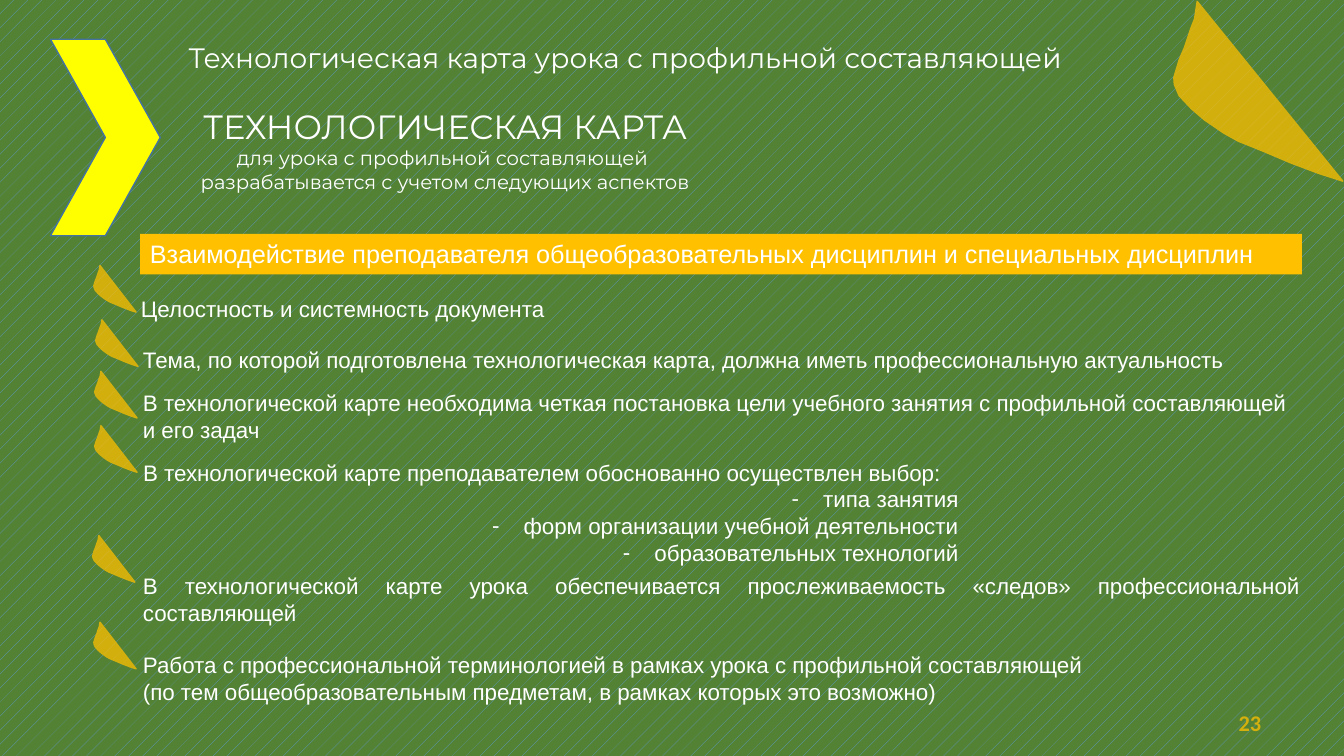
from lxml.etree import SubElement
from pptx import Presentation
from pptx.dml.color import RGBColor as RGB
from pptx.enum.dml import MSO_PATTERN as PATTERN
from pptx.enum.shapes import MSO_SHAPE as SHAPE
from pptx.enum.text import MSO_ANCHOR as ANCHOR, MSO_AUTO_SIZE as AUTO, PP_ALIGN as ALIGN
from pptx.oxml.ns import qn
from pptx.util import Pt

COLORS = {
    "green": "548235", "blue": "5B9BD5", "white": "FFFFFF", "yellow": "FFFF00",
    "amber": "FFC000", "gold": "D3B00E", "navy": "43739E",
}
LEAF = [
    (2.7, 0), (3.5, 12.6), (2.7, 20), (1.8, 34), (0.6, 43), (0, 56.3), (1.1, 61), (5, 68),
    (13, 75), (21, 80.5), (32.5, 86.4), (41, 89.6), (55, 92.4), (71, 96), (86.5, 98.6), (100, 100),
]
LEAF_SPOTS = [(67, 193), (68.4, 231.8), (67.7, 268.6), (67.7, 307.4), (66.2, 385.9), (67, 447.8)]
ASPECTS = [
    ((93.6, 207.4, 841, 26.6), ALIGN.JUSTIFY, ["Целостность и системность документа"]),
    ((95, 243.4, 841, 26.6), ALIGN.JUSTIFY,
     ["Тема, по которой подготовлена технологическая карта, должна иметь профессиональную актуальность"]),
    ((95, 274.3, 847.4, 46), ALIGN.LEFT,
     ["В технологической карте необходима четкая постановка цели учебного занятия с профильной составляющей",
      "и его задач"]),
    ((95, 405.4, 841, 46), ALIGN.JUSTIFY,
     ["В технологической карте урока обеспечивается прослеживаемость «следов» профессиональной составляющей"]),
    ((95, 461.5, 699, 46), ALIGN.LEFT,
     ["Работа с профессиональной терминологией в рамках урока с профильной составляющей",
      "(по тем общеобразовательным предметам, в рамках которых это возможно)"]),
]
CHOICES = ["типа занятия", "форм организации учебной деятельности", "образовательных технологий"]


def color(name):
    return RGB.from_string(COLORS[name])


def apply(target, values):
    for name, value in values.items():
        setattr(target, name, value)


class Deck:
    base = {"name": "Arial", "size": Pt(16), "bold": False}

    def __init__(self, prs, s):
        self.prs, self.s = prs, s

    def background(self, fore, back):
        fill = self.s.background.fill
        fill.patterned()
        fill.pattern = PATTERN.PERCENT_5
        fill.fore_color.rgb = color(fore)
        fill.back_color.rgb = color(back)

    def place(self, sp, box):
        apply(sp, dict(zip(("left", "top", "width", "height"), map(Pt, box))))

    def fill_text(self, sp, lines, align=ALIGN.LEFT, ink="white", sizes=None, anchor=ANCHOR.TOP, **font):
        tf = sp.text_frame
        apply(tf, {"word_wrap": True, "auto_size": AUTO.SHAPE_TO_FIT_TEXT, "vertical_anchor": anchor})
        for i, line in enumerate(lines):
            p = tf.paragraphs[0] if i == 0 else tf.add_paragraph()
            apply(p, {"alignment": align, "space_before": Pt(0), "line_spacing": 1.0})
            r = p.add_run()
            r.text = line
            apply(r.font, {**self.base, **font})
            if sizes:
                r.font.size = Pt(sizes[i])
            r.font.color.rgb = color(ink)
        return tf

    def placeholder(self, index, box, lines, **style):
        sp = self.s.placeholders[index]
        self.place(sp, box)
        return self.fill_text(sp, lines, **style)

    def text(self, box, lines, **style):
        return self.fill_text(self.s.shapes.add_textbox(*map(Pt, box)), lines, **style)

    def bullet(self, p, mark=None, indent=0):
        pPr = p._p.get_or_add_pPr()
        pPr.set("marL", str(Pt(indent)))
        pPr.set("indent", str(Pt(-indent)))
        if mark:
            SubElement(pPr, qn("a:buFontTx"))
            SubElement(pPr, qn("a:buChar"), char=mark)
        else:
            SubElement(pPr, qn("a:buNone"))

    def paint(self, sp, fill, line=None):
        sp.shadow.inherit = False
        sp.fill.solid()
        sp.fill.fore_color.rgb = color(fill)
        if line:
            sp.line.color.rgb = color(line)
            sp.line.width = Pt(1)
        else:
            sp.line.fill.background()

    def shape(self, kind, box, fill, line=None):
        sp = self.s.shapes.add_shape(kind, *map(Pt, box))
        self.paint(sp, fill, line)
        return sp

    def leaf(self, x, y, w, h):
        points = [(Pt(x + w * u / 100), Pt(y + h * v / 100)) for u, v in LEAF]
        fb = self.s.shapes.build_freeform(*points[0])
        fb.add_line_segments(points[1:], close=True)
        sp = fb.convert_to_shape()
        sp.rotation = 13.4
        self.paint(sp, "amber", "gold")
        tint = sp._element.spPr.find(qn("a:solidFill")).find(qn("a:srgbClr"))
        SubElement(tint, qn("a:alpha"), val="74000")


def main():
    prs = Presentation()
    apply(prs, {"slide_width": Pt(960), "slide_height": Pt(540)})
    deck = Deck(prs, prs.slides.add_slide(prs.slide_layouts[1]))
    deck.background("blue", "green")
    deck.leaf(838.1, 14.4, 134.6, 100.8)
    deck.placeholder(0, (127.5, 25.2, 707.8, 31.7),
                     ["Технологическая карта урока с профильной составляющей"],
                     name="Montserrat", size=Pt(20))
    deck.text((36, 72, 564, 70.6),
              ["ТЕХНОЛОГИЧЕСКАЯ КАРТА", "для урока с профильной составляющей ",
               "разрабатывается с учетом следующих аспектов"],
              align=ALIGN.CENTER, name="Montserrat", sizes=(24, 14, 14))
    deck.shape(SHAPE.CHEVRON, (36, 28, 78.5, 140.4), "yellow", "navy")
    for x, y in LEAF_SPOTS:
        deck.leaf(x, y, 33.7, 26.4)
    for box, align, lines in ASPECTS:
        deck.text(box, lines, align=align)

    tf = deck.placeholder(1, (95, 324, 596.9, 104.4),
                          ["В технологической карте преподавателем обоснованно осуществлен выбор:", *CHOICES])
    deck.bullet(tf.paragraphs[0])
    for p in tf.paragraphs[1:]:
        p.alignment = ALIGN.RIGHT
        deck.bullet(p, "-", 22.5)

    deck.text((692, 501.8, 216, 28.8), ["23"], align=ALIGN.RIGHT, ink="gold",
              anchor=ANCHOR.MIDDLE, name="Calibri", bold=True)
    banner = deck.shape(SHAPE.RECTANGLE, (100, 167, 830, 29), "amber")
    deck.fill_text(banner, ["Взаимодействие преподавателя общеобразовательных дисциплин и специальных дисциплин"],
                   size=Pt(18))
    prs.save("out.pptx")


if __name__ == "__main__":
    main()
